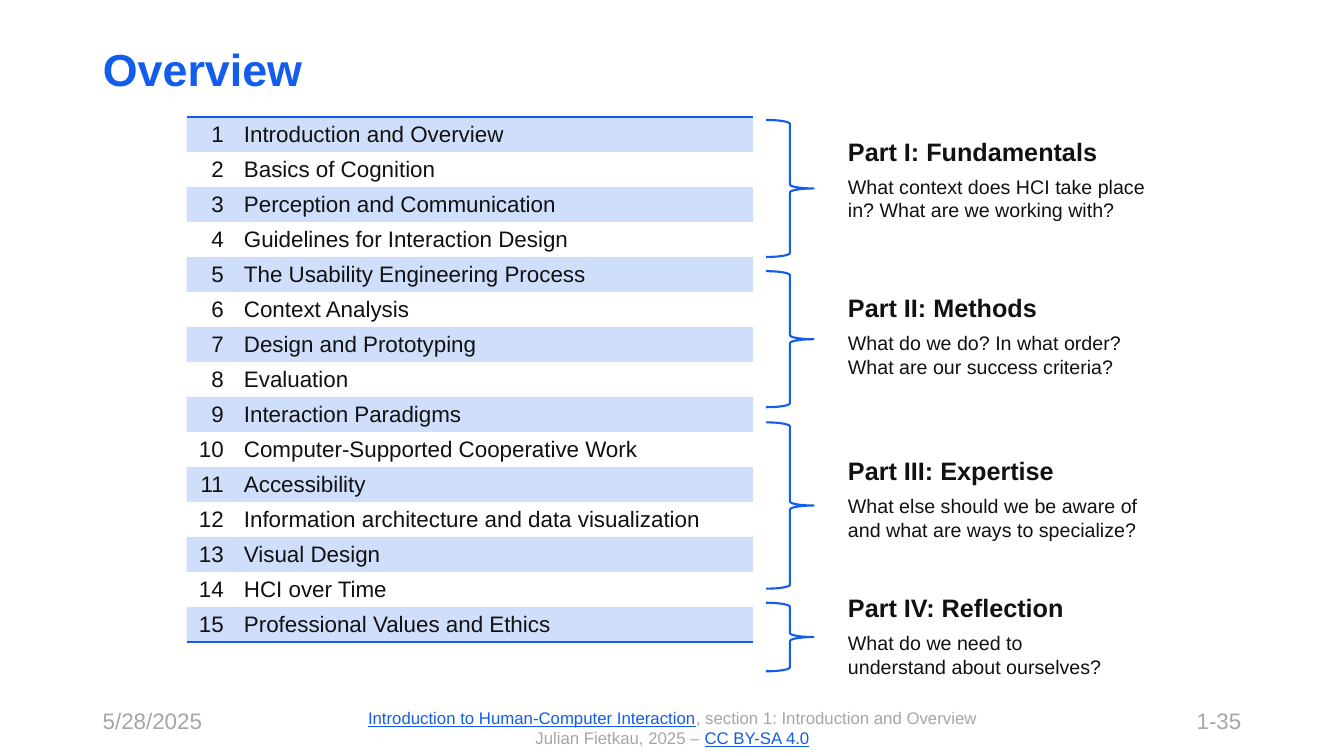
import pptx
import pptx.util
import pptx.dml.color
import pptx.enum.shapes
import pptx.enum.text
import pptx.oxml
import pptx.oxml.ns

Inches = pptx.util.Inches
Pt = pptx.util.Pt
ALIGN = pptx.enum.text.PP_ALIGN
ANCHOR = pptx.enum.text.MSO_ANCHOR
COLORS = {"blue": "125CEE", "ink": "111111", "gray": "A6A6A6"}
PLAIN = "{2D5ABB26-0587-4C30-8999-92F81FD0307C}"

TOPICS = [
    "Introduction and Overview",
    "Basics of Cognition",
    "Perception and Communication",
    "Guidelines for Interaction Design",
    "The Usability Engineering Process",
    "Context Analysis",
    "Design and Prototyping",
    "Evaluation",
    "Interaction Paradigms",
    "Computer-Supported Cooperative Work",
    "Accessibility",
    "Information architecture and data visualization",
    "Visual Design",
    "HCI over Time",
    "Professional Values and Ethics",
]
GROUPS = [
    (1.19, 1.36, 1.31, 3.11, "Part I: Fundamentals",
     "What context does HCI take place in? What are we working with?"),
    (2.69, 1.35, 2.86, 2.88, "Part II: Methods",
     "What do we do? In what order? What are our success criteria?"),
    (4.19, 1.65, 4.48, 3.29, "Part III: Expertise",
     "What else should we be aware of and what are ways to specialize?"),
    (5.98, 0.68, 5.84, 2.79, "Part IV: Reflection",
     "What do we need to understand about ourselves?"),
]
CREDIT = [
    [("Introduction to Human-Computer Interaction", True),
     (", section 1: Introduction and Overview", False)],
    [("Julian Fietkau, 2025 – ", False), ("CC BY-SA 4.0", True)],
]


class Page:
    font = "Arial"

    def __init__(self, deck):
        self.slide = deck.slides.add_slide(deck.slide_layouts[5])

    def color(self, name):
        return pptx.dml.color.RGBColor.from_string(COLORS[name])

    def style(self, run, size, color, bold=False, under=False):
        run.font.name = self.font
        run.font.size = Pt(size)
        run.font.color.rgb = self.color(color)
        run.font.bold = bold
        run.font.underline = under

    def title(self, text, *box):
        shape = self.slide.shapes.title
        shape.left, shape.top, shape.width, shape.height = map(Inches, box)
        frame = shape.text_frame
        frame.text = text
        frame.vertical_anchor = ANCHOR.MIDDLE
        par = frame.paragraphs[0]
        par.alignment = ALIGN.LEFT
        par.line_spacing = 0.9
        self.style(par.runs[0], 32, "blue", bold=True)

    def box(self, *box, inset=None):
        frame = self.slide.shapes.add_textbox(*map(Inches, box)).text_frame
        frame.word_wrap = True
        if inset is not None:
            frame.margin_left = frame.margin_right = Inches(inset)
            frame.margin_top = frame.margin_bottom = Inches(inset)
        return frame

    def label(self, text, align, *box):
        frame = self.box(*box)
        frame.text = text
        par = frame.paragraphs[0]
        par.alignment = align
        self.style(par.runs[0], 16, "gray")

    def credit(self, lines, *box):
        frame = self.box(*box)
        frame.text = "\n".join("" for line in lines)
        for par, line in zip(frame.paragraphs, lines):
            par.alignment = ALIGN.CENTER
            for text, link in line:
                run = par.add_run()
                run.text = text
                self.style(run, 12, "blue" if link else "gray", under=link)

    def blurb(self, head, body, *box):
        frame = self.box(*box, inset=0.04)
        frame.text = head + "\n" + body
        for par, size, bold in zip(frame.paragraphs, (18, 14), (True, False)):
            par.space_after = Pt(6)
            self.style(par.runs[0], size, "ink", bold=bold)

    def brace(self, *box):
        kind = pptx.enum.shapes.MSO_SHAPE.RIGHT_BRACE
        shape = self.slide.shapes.add_shape(kind, *map(Inches, box))
        shape.shadow.inherit = False
        shape.fill.background()
        shape.line.color.rgb = self.color("blue")
        shape.line.width = Pt(1.5)

    def tint(self, cell):
        cell.fill.solid()
        cell.fill.fore_color.rgb = self.color("blue")
        tone = cell._tc.tcPr.find(".//" + pptx.oxml.ns.qn("a:srgbClr"))
        tone.append(pptx.oxml.parse_xml(
            f'<a:alpha {pptx.oxml.ns.nsdecls("a")} val="20000"/>'))

    def rule(self, cell, side):
        cell._tc.get_or_add_tcPr().insert(0, pptx.oxml.parse_xml(
            f'<a:{side} {pptx.oxml.ns.nsdecls("a")} w="12700"><a:solidFill>'
            f'<a:srgbClr val="{COLORS["blue"]}"/></a:solidFill></a:{side}>'))

    def table(self, topics, left, top, widths, height):
        count = len(topics)
        table = self.slide.shapes.add_table(
            count, 2, Inches(left), Inches(top),
            Inches(sum(widths)), Inches(height)).table
        table.first_row = table.horz_banding = False
        table._tbl.tblPr.find(pptx.oxml.ns.qn("a:tableStyleId")).text = PLAIN
        for col, width in zip(table.columns, widths):
            col.width = Inches(width)
        for i, topic in enumerate(topics):
            table.rows[i].height = Inches(height / count)
            pair = ((str(i + 1), ALIGN.RIGHT), (topic, ALIGN.LEFT))
            for j, (text, align) in enumerate(pair):
                cell = table.cell(i, j)
                cell.text = text
                cell.margin_top = cell.margin_bottom = Inches(0.04)
                cell.vertical_anchor = ANCHOR.MIDDLE
                par = cell.text_frame.paragraphs[0]
                par.alignment = align
                self.style(par.runs[0], 16, "ink")
                if i % 2:
                    cell.fill.background()
                else:
                    self.tint(cell)
                if i == 0:
                    self.rule(cell, "lnT")
                if i == count - 1:
                    self.rule(cell, "lnB")


def main():
    deck = pptx.Presentation()
    deck.slide_width, deck.slide_height = Inches(13.33), Inches(7.5)
    page = Page(deck)
    page.title("Overview", 0.92, 0.37, 11.5, 0.68)
    page.credit(CREDIT, 2.66, 6.97, 8.02, 0.5)
    page.label("5/28/2025", ALIGN.LEFT, 0.92, 6.97, 1.74, 0.37)
    page.label("1-35", ALIGN.RIGHT, 9.1, 6.97, 3.31, 0.37)
    page.table(TOPICS, 1.85, 1.16, (0.47, 5.15), 5.21)
    for top, height, y, width, head, body in GROUPS:
        page.brace(7.6, top, 0.47, height)
        page.blurb(head, body, 8.37, y, width, 1.03)
    deck.save("out.pptx")


if __name__ == "__main__":
    main()
